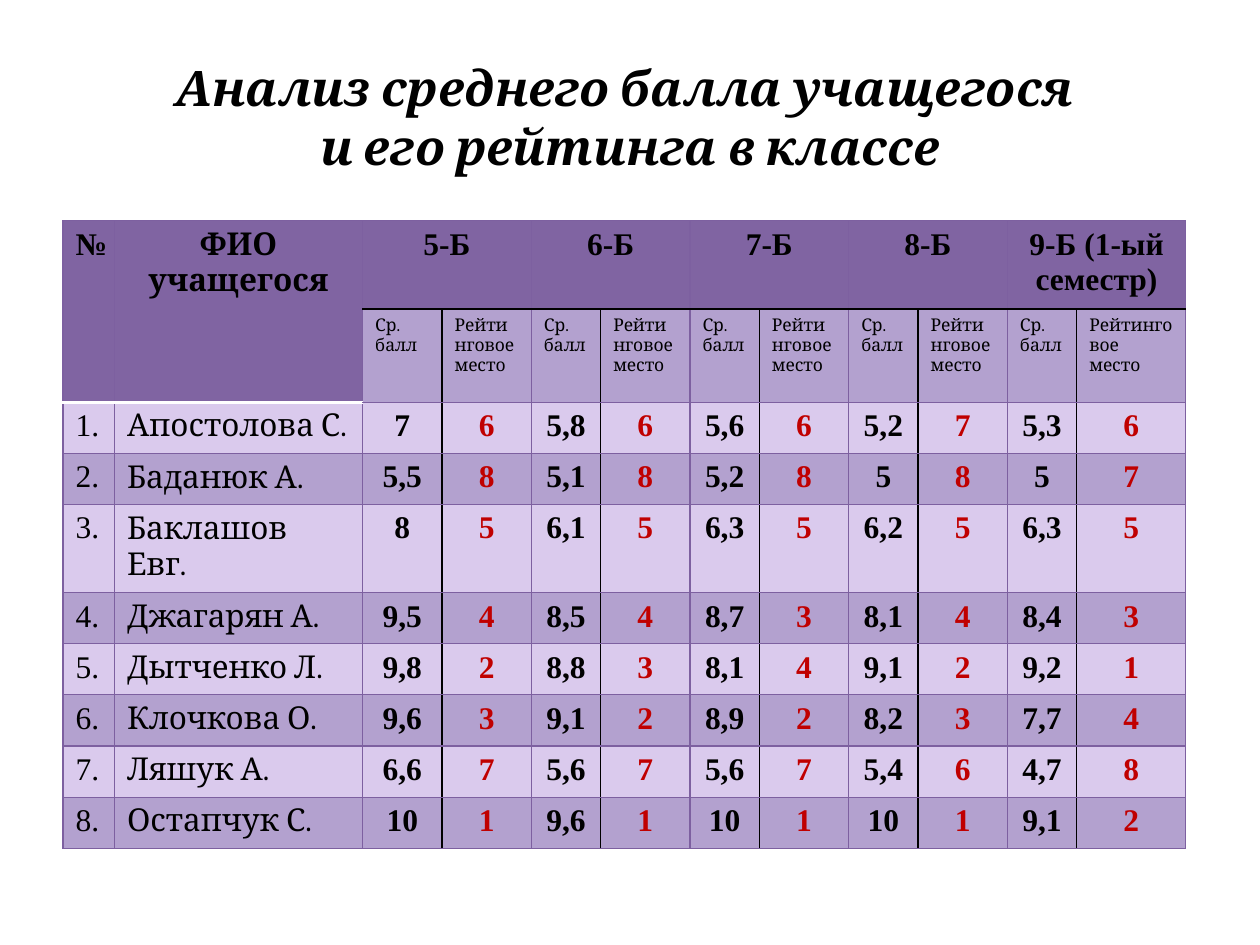
from dataclasses import dataclass

from lxml.etree import SubElement
from pptx import Presentation
from pptx.dml.color import RGBColor
from pptx.enum.text import MSO_ANCHOR, PP_ALIGN
from pptx.oxml.ns import qn
from pptx.table import Table, _Cell
from pptx.util import Cm, Pt

BLACK = RGBColor(0x00, 0x00, 0x00)
WHITE = RGBColor(0xFF, 0xFF, 0xFF)
RED = RGBColor(0xC0, 0x00, 0x00)
HEADER = RGBColor(0x80, 0x64, 0xA2)
DARK_BAND = RGBColor(0xB3, 0xA1, 0xCF)
LIGHT_BAND = RGBColor(0xDA, 0xCA, 0xED)
RULE = RGBColor(0x7D, 0x60, 0xA0)
CAMBRIA = "Cambria"
TIMES = "Times New Roman"


@dataclass(frozen=True)
class Border:
    color: RGBColor
    points: float


@dataclass(frozen=True)
class Style:
    font: str = TIMES
    size: int = 18
    bold: bool = True
    color: RGBColor = BLACK
    align: PP_ALIGN = PP_ALIGN.CENTER


@dataclass(frozen=True)
class Pupil:
    name: str
    averages: tuple[str, ...]
    ranks: tuple[str, ...]


PURPLE_LINE = Border(RULE, 0.75)
BLACK_LINE = Border(BLACK, 1)
WHITE_LINE = Border(WHITE, 2)

NUMBER = Style(bold=False, align=PP_ALIGN.LEFT)
NAME = Style(font=CAMBRIA, bold=False, align=PP_ALIGN.LEFT)
SUBHEADING = Style(font=CAMBRIA, size=10, bold=False, align=PP_ALIGN.LEFT)
AVERAGE = Style()
RANK = Style(color=RED)

CLASSES = ("5-Б", "6-Б", "7-Б", "8-Б", "9-Б (1-ый семестр)")
PUPILS = (
    Pupil("Апостолова С.", ("7", "5,8", "5,6", "5,2", "5,3"), ("6", "6", "6", "7", "6")),
    Pupil("Баданюк А.", ("5,5", "5,1", "5,2", "5", "5"), ("8", "8", "8", "8", "7")),
    Pupil("Баклашов Евг.", ("8", "6,1", "6,3", "6,2", "6,3"), ("5", "5", "5", "5", "5")),
    Pupil("Джагарян А.", ("9,5", "8,5", "8,7", "8,1", "8,4"), ("4", "4", "3", "4", "3")),
    Pupil("Дытченко Л.", ("9,8", "8,8", "8,1", "9,1", "9,2"), ("2", "3", "4", "2", "1")),
    Pupil("Клочкова О.", ("9,6", "9,1", "8,9", "8,2", "7,7"), ("3", "2", "2", "3", "4")),
    Pupil("Ляшук А.", ("6,6", "5,6", "5,6", "5,4", "4,7"), ("7", "7", "7", "6", "8")),
    Pupil("Остапчук С.", ("10", "9,6", "10", "10", "9,1"), ("1", "1", "1", "1", "2")),
)
COLUMN_WIDTHS = (1.04, 5, 1.6, 1.8) + (1.4, 1.8) * 3 + (1.4, 2.2)
ROW_HEIGHTS = (1.68, 1.88) + (1.03,) * len(PUPILS)


def write(cell: _Cell, text: str, style: Style) -> None:
    cell.text = text
    for para in cell.text_frame.paragraphs:
        para.alignment = style.align
        para.font.name = style.font
        para.font.size = Pt(style.size)
        para.font.bold = style.bold
        para.font.color.rgb = style.color


def draw_border(cell: _Cell, side: str, border: Border) -> None:
    line = SubElement(cell._tc.get_or_add_tcPr(), qn(f"a:ln{side}"), w=str(Pt(border.points)))
    fill = SubElement(line, qn("a:solidFill"))
    SubElement(fill, qn("a:srgbClr"), val=str(border.color))


def style_cell(table: Table, row: int, column: int) -> None:
    cell = table.cell(row, column)
    left = right = top = bottom = PURPLE_LINE
    if column >= 2:
        if row >= 1 and column % 2 == 0:
            right = BLACK_LINE
        elif row >= 1:
            left = BLACK_LINE
        if row == 0:
            bottom = BLACK_LINE
        elif row == 1:
            top = BLACK_LINE
    elif row <= 1:
        bottom = WHITE_LINE
    elif row == 2:
        top = WHITE_LINE
    for side, border in zip("LRTB", (left, right, top, bottom)):
        draw_border(cell, side, border)
    cell.fill.solid()
    if row == 0 or (row == 1 and column < 2):
        cell.fill.fore_color.rgb = HEADER
    else:
        cell.fill.fore_color.rgb = DARK_BAND if row % 2 else LIGHT_BAND


def fill_headings(table: Table) -> None:
    for column, (text, font) in enumerate((("№", TIMES), ("ФИО учащегося", CAMBRIA))):
        table.cell(0, column).merge(table.cell(1, column))
        write(table.cell(0, column), text, Style(font=font))
    for index, title in enumerate(CLASSES):
        column = 2 + 2 * index
        table.cell(0, column).merge(table.cell(0, column + 1))
        write(table.cell(0, column), title, Style())
        write(table.cell(1, column), "Ср.\nбалл", SUBHEADING)
        write(table.cell(1, column + 1), "Рейтинговое место", SUBHEADING)


def fill_pupil(table: Table, number: int, pupil: Pupil) -> None:
    row = number + 1
    write(table.cell(row, 0), f"{number}.", NUMBER)
    write(table.cell(row, 1), pupil.name, NAME)
    for index, (average, rank) in enumerate(zip(pupil.averages, pupil.ranks)):
        write(table.cell(row, 2 + 2 * index), average, AVERAGE)
        write(table.cell(row, 3 + 2 * index), rank, RANK)


def add_title(page) -> None:
    box = page.shapes.add_textbox(Cm(1.27), Cm(0.76), Cm(22.86), Cm(3.18))
    frame = box.text_frame
    frame.word_wrap = True
    frame.vertical_anchor = MSO_ANCHOR.MIDDLE
    para = frame.paragraphs[0]
    para.text = "Анализ среднего балла учащегося \vи его рейтинга в классе"
    para.alignment = PP_ALIGN.CENTER
    para.font.name = CAMBRIA
    para.font.size = Pt(28)
    para.font.bold = True
    para.font.italic = True
    para.font.color.rgb = BLACK


def add_ratings(page) -> None:
    table = page.shapes.add_table(
        len(ROW_HEIGHTS), len(COLUMN_WIDTHS), Cm(1.27), Cm(4.45),
        Cm(sum(COLUMN_WIDTHS)), Cm(sum(ROW_HEIGHTS)),
    ).table
    for column, width in zip(table.columns, COLUMN_WIDTHS):
        column.width = Cm(width)
    for row, height in zip(table.rows, ROW_HEIGHTS):
        row.height = Cm(height)
    for row in range(len(ROW_HEIGHTS)):
        for column in range(len(COLUMN_WIDTHS)):
            style_cell(table, row, column)
    fill_headings(table)
    for number, pupil in enumerate(PUPILS, 1):
        fill_pupil(table, number, pupil)


def main() -> None:
    deck = Presentation()
    deck.slide_width = Cm(25.4)
    deck.slide_height = Cm(19.05)
    page = deck.slides.add_slide(deck.slide_layouts[6])
    add_title(page)
    add_ratings(page)
    deck.save("out.pptx")


if __name__ == "__main__":
    main()
